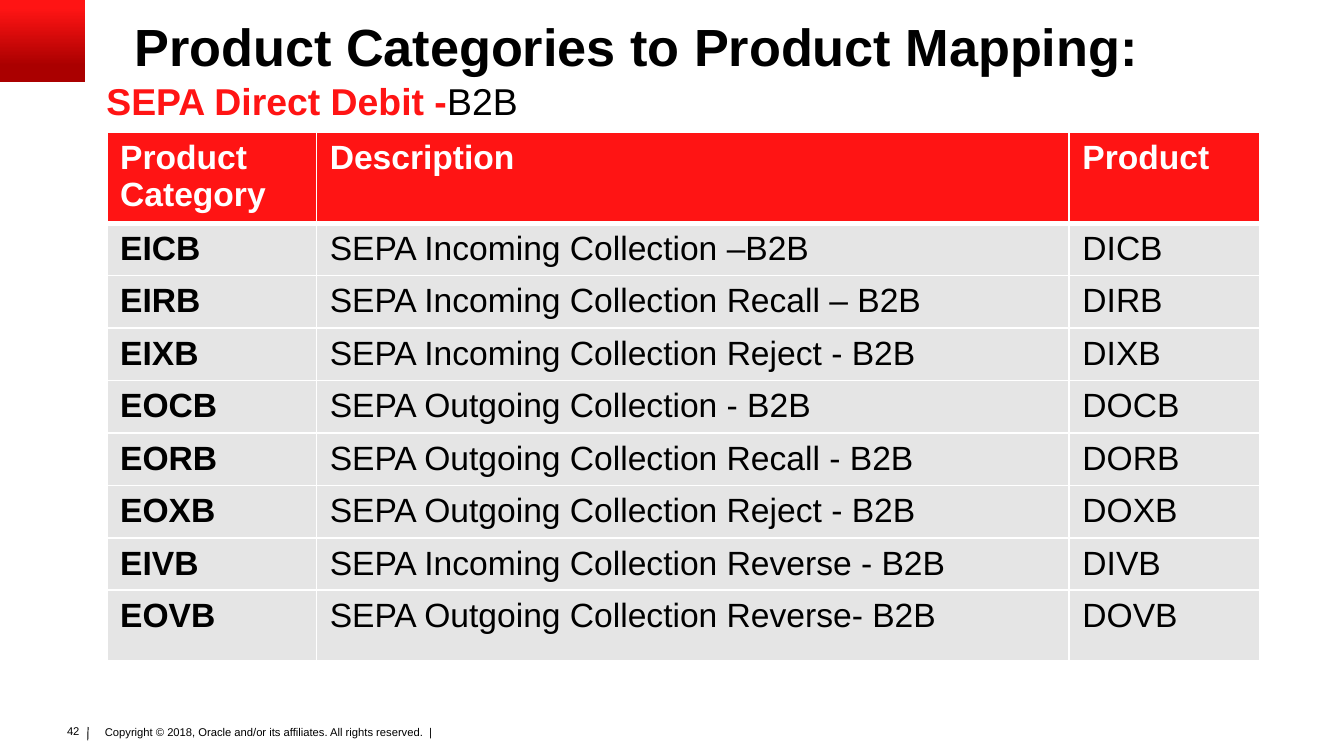
"""Build the slide that maps SEPA direct debit categories to products."""
import lxml.etree
import pptx
import pptx.dml.color
import pptx.enum.shapes
import pptx.enum.text
import pptx.oxml.ns
import pptx.util

Pt = pptx.util.Pt
qn = pptx.oxml.ns.qn
ALIGN = pptx.enum.text.PP_ALIGN
COLOURS = {"red": "FF1414", "dark red": "AA0000", "grey": "E5E5E5",
           "white": "FFFFFF", "black": "000000"}
HEADINGS = ("Product Category", "Description", "Product")
MAPPINGS = (
    ("EICB", "SEPA Incoming Collection –B2B", "DICB"),
    ("EIRB", "SEPA Incoming Collection Recall – B2B", "DIRB"),
    ("EIXB", "SEPA Incoming Collection Reject - B2B", "DIXB"),
    ("EOCB", "SEPA Outgoing Collection - B2B", "DOCB"),
    ("EORB", "SEPA Outgoing Collection Recall - B2B", "DORB"),
    ("EOXB", "SEPA Outgoing Collection Reject - B2B", "DOXB"),
    ("EIVB", "SEPA Incoming Collection Reverse - B2B", "DIVB"),
    ("EOVB", "SEPA Outgoing Collection Reverse- B2B", "DOVB"),
)
COLUMN_WIDTHS = (112.3, 403.2, 102.3)
ROW_HEIGHTS = (49, *[28.1] * 7, 38)


def colour(name):
    return pptx.dml.color.RGBColor.from_string(COLOURS[name])


def add_span(para, text, size, ink="black", bold=False):
    span = para.add_run()
    span.text = text
    span.font.name = "Arial"
    span.font.size = Pt(size)
    span.font.bold = bold
    span.font.color.rgb = colour(ink)


def set_frame(frame, insets, wrap=True):
    frame.word_wrap = wrap
    frame.auto_size = pptx.enum.text.MSO_AUTO_SIZE.NONE
    frame.vertical_anchor = pptx.enum.text.MSO_ANCHOR.TOP
    frame.margin_left = frame.margin_right = Pt(insets[0])
    frame.margin_top = frame.margin_bottom = Pt(insets[1])


def add_text(page, place, spans, insets=(0, 0), wrap=True, align=ALIGN.LEFT):
    box = page.shapes.add_textbox(*map(Pt, place))
    set_frame(box.text_frame, insets, wrap)
    para = box.text_frame.paragraphs[0]
    para.alignment = align
    for span in spans:
        add_span(para, *span)


def set_title(page, text):
    title = page.shapes.title
    title.left, title.top, title.width, title.height = map(Pt, (72, 11.5, 648, 34.5))
    set_frame(title.text_frame, (0, 0))
    para = title.text_frame.paragraphs[0]
    para.alignment = ALIGN.LEFT
    para.line_spacing = 0.9
    add_span(para, text, 28, bold=True)


def add_corner(page):
    corner = page.shapes.add_shape(
        pptx.enum.shapes.MSO_SHAPE.RECTANGLE, 0, 0, Pt(45.5), Pt(44))
    corner.shadow.inherit = False
    corner.line.fill.background()
    corner.fill.gradient()
    corner.fill.gradient_angle = 90
    stops = ((0.2, "dark red"), (0.9, "red"))
    for stop, (position, name) in zip(corner.fill.gradient_stops, stops):
        stop.position = position
        stop.color.rgb = colour(name)


def add_divider(page):
    line = page.shapes.add_connector(
        pptx.enum.shapes.MSO_CONNECTOR.STRAIGHT, *map(Pt, (47.2, 389.5, 47, 396.7)))
    line.line.color.rgb = colour("black")
    line.line.width = Pt(0.5)
    lxml.etree.SubElement(line._element.spPr, qn("a:effectLst"))


def set_borders(cell, widths):
    properties = cell._tc.get_or_add_tcPr()
    for side, width in zip("LRTB", widths):
        edge = lxml.etree.SubElement(properties, qn(f"a:ln{side}"), w=str(Pt(width)))
        fill = lxml.etree.SubElement(edge, qn("a:solidFill"))
        lxml.etree.SubElement(fill, qn("a:srgbClr"), val=COLOURS["white"])


def fill_cell(cell, text, row, column):
    heading = row == 0
    set_borders(cell, (1, 1, 3 if row == 1 else 1, 3 if heading else 1))
    cell.fill.solid()
    cell.fill.fore_color.rgb = colour("red" if heading else "grey")
    add_span(cell.text_frame.paragraphs[0], text, 18,
             "white" if heading else "black", heading or column == 0)


def add_mapping_table(page):
    rows = (HEADINGS, *MAPPINGS)
    table = page.shapes.add_table(
        len(rows), len(HEADINGS), Pt(57.2), Pt(70.6),
        Pt(sum(COLUMN_WIDTHS)), Pt(sum(ROW_HEIGHTS))).table
    for column, width in zip(table.columns, COLUMN_WIDTHS):
        column.width = Pt(width)
    for row, height in zip(table.rows, ROW_HEIGHTS):
        row.height = Pt(height)
    for row, texts in enumerate(rows):
        for column, text in enumerate(texts):
            fill_cell(table.cell(row, column), text, row, column)


def main():
    deck = pptx.Presentation()
    deck.slide_width, deck.slide_height = Pt(720), Pt(405)
    page = deck.slides.add_slide(deck.slide_layouts[5])
    add_text(page, (53.3, 387.4, 470, 17.3),
             [("Copyright © 2018, Oracle and/or its affiliates. All rights reserved.  |", 6)],
             insets=(2.9, 1.4))
    add_divider(page)
    add_text(page, (28.1, 384.5, 21.6, 14.4), [("42", 6)],
             insets=(7.2, 3.6), wrap=False, align=ALIGN.RIGHT)
    add_corner(page)
    set_title(page, "Product Categories to Product Mapping:")
    add_mapping_table(page)
    add_text(page, (57, 42, 648, 24),
             [("SEPA Direct Debit -", 20, "red", True), ("B2B", 20)])
    deck.save("out.pptx")


if __name__ == "__main__":
    main()
